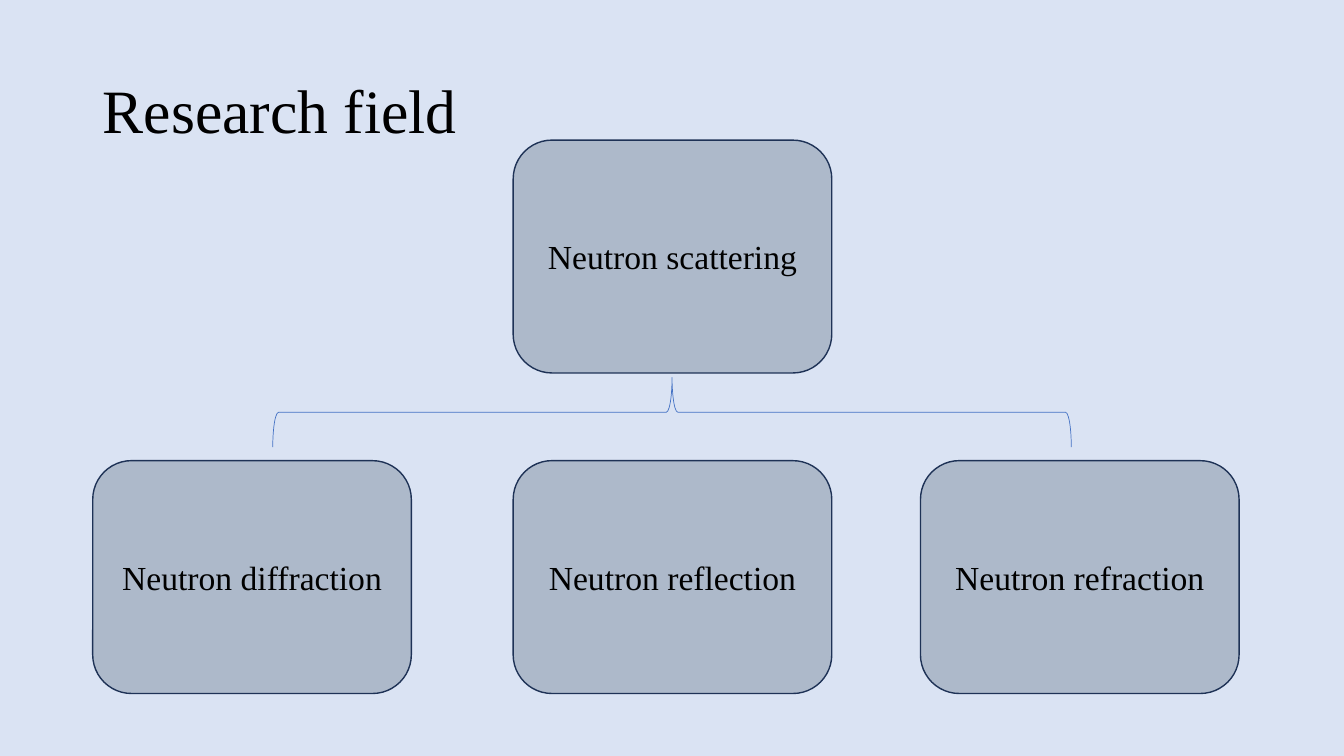
from pptx import Presentation
from pptx.dml.color import RGBColor
from pptx.enum import shapes, text
from pptx.util import Inches, Pt

FONT = "Times New Roman"


def paint(color, code):
    color.rgb = RGBColor.from_string(code)


def write(frame, words, size, align):
    frame.word_wrap = True
    frame.vertical_anchor = text.MSO_ANCHOR.MIDDLE
    par = frame.paragraphs[0]
    par.alignment = align
    run = par.add_run()
    run.text = words
    run.font.name = FONT
    run.font.size = Pt(size)
    paint(run.font.color, "000000")
    return par


deck = Presentation()
deck.slide_width, deck.slide_height = Inches(13.33), Inches(7.5)
slide = deck.slides.add_slide(deck.slide_layouts[5])
back = slide.background.fill
back.solid()
paint(back.fore_color, "DAE3F3")

# Title
title = slide.shapes.title
title.left, title.top = Inches(0.92), Inches(0.4)
title.width, title.height = Inches(11.5), Inches(1.45)
par = write(title.text_frame, "Research field", 44, text.PP_ALIGN.LEFT)
par.line_spacing = 0.9

# The field on top, its three methods below
top, low = 1.39, 4.57
fields = [
    ("Neutron scattering", 5.09, top),
    ("Neutron diffraction", 0.92, low),
    ("Neutron reflection", 5.09, low),
    ("Neutron refraction", 9.13, low),
]
for name, x, y in fields:
    box = slide.shapes.add_shape(
        shapes.MSO_SHAPE.ROUNDED_RECTANGLE,
        Inches(x), Inches(y), Inches(3.16), Inches(2.31))
    box.shadow.inherit = False
    box.fill.solid()
    paint(box.fill.fore_color, "ADB9CA")
    paint(box.line.color, "1E3256")
    box.line.width = Pt(1)
    write(box.text_frame, name, 24, text.PP_ALIGN.CENTER)

# Brace turned to point up at the field
brace = slide.shapes.add_shape(
    shapes.MSO_SHAPE.LEFT_BRACE,
    Inches(6.32), Inches(0.13), Inches(0.69), Inches(7.92))
brace.rotation = 90
brace.shadow.inherit = False
brace.fill.background()
paint(brace.line.color, "4472C4")
brace.line.width = Pt(0.5)

deck.save("out.pptx")
